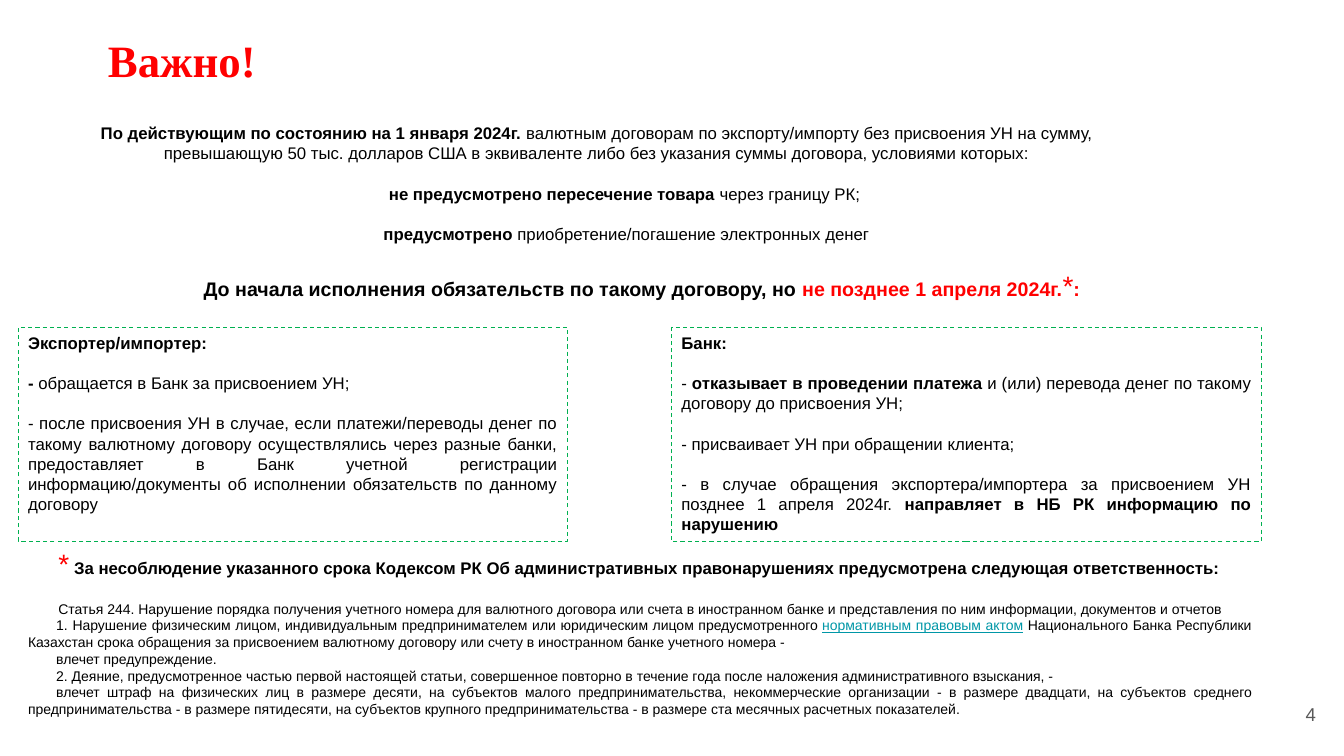
import pptx
import pptx.dml.color
import pptx.enum.dml
import pptx.enum.shapes
import pptx.enum.text
import pptx.util

Inches, Pt = pptx.util.Inches, pptx.util.Pt
ALIGN = pptx.enum.text.PP_ALIGN
ANCHOR = pptx.enum.text.MSO_ANCHOR

COLORS = {"black": "000000", "red": "FF0000", "green": "00B050",
          "link": "0097A7", "grey": "595959"}
LINE = 1.2  # line height relative to the font size
GAP = 14.4  # space of one 12 pt line between paragraphs

# Content: a paragraph is (runs, options), a run is (text, options)
BOLD = {"bold": True}
RED = {"bold": True, "color": "red"}
STAR = {"size": 20, "color": "red"}
CENTER = {"align": ALIGN.CENTER}
SPACED = {"before": GAP}
NOTE = {"size": 10, "first_line": 0.28}

TITLE = [([("Важно!", RED)], {"align": ALIGN.CENTER, "size": 32,
                              "font": "Times New Roman"})]
CONDITIONS = [
    ([("По действующим по состоянию на 1 января 2024г. ", BOLD),
      ("валютным договорам по экспорту/импорту без присвоения УН на сумму, "
       "превышающую 50 тыс. долларов США в эквиваленте либо без указания "
       "суммы договора, условиями которых:", {})], CENTER),
    ([("не предусмотрено пересечение товара", BOLD),
      (" через границу РК;", {})], {**CENTER, **SPACED, "left": 0.55}),
    ([("предусмотрено", BOLD),
      (" приобретение/погашение электронных денег", {})],
     {**CENTER, **SPACED, "left": 0.59}),
]
DEADLINE = [
    ([("До начала исполнения обязательств по такому договору, но ", BOLD),
      ("не позднее 1 апреля 2024г.", RED), ("*", STAR), (":", RED)],
     {**CENTER, "size": 14}),
]
TRADER = [
    ([("Экспортер/импортер:", BOLD)], {}),
    ([("- ", BOLD), ("обращается в Банк за присвоением УН;", {})], SPACED),
    ([("- после присвоения УН в случае, если платежи/переводы денег по такому "
       "валютному договору осуществлялись через разные банки, предоставляет в "
       "Банк учетной регистрации информацию/документы об исполнении "
       "обязательств по данному договору", {})], SPACED),
]
BANK = [
    ([("Банк:", BOLD)], {}),
    ([("- ", {}), ("отказывает в проведении платежа", BOLD),
      (" и (или) перевода денег по такому договору до присвоения УН;", {})],
     SPACED),
    ([("- присваивает УН при обращении клиента;", {})], SPACED),
    ([("- в случае обращения экспортера/импортера за присвоением УН позднее "
       "1 апреля 2024г. ", {}),
      ("направляет в НБ РК информацию по нарушению", BOLD)], SPACED),
]
LIABILITY = [
    ([("*", STAR),
      (" За несоблюдение указанного срока Кодексом РК Об административных "
       "правонарушениях предусмотрена следующая ответственность:", BOLD)],
     CENTER),
    ([("Статья 244. Нарушение порядка получения учетного номера для валютного "
       "договора или счета в иностранном банке и представления по ним "
       "информации, документов и отчетов", {})],
     {**CENTER, **SPACED, "size": 10}),
    ([("1. Нарушение физическим лицом, индивидуальным предпринимателем или "
       "юридическим лицом предусмотренного ", {}),
      ("нормативным правовым актом", {"color": "link", "underline": True}),
      (" Национального Банка Республики Казахстан срока обращения за "
       "присвоением валютному договору или счету в иностранном банке учетного "
       "номера -", {})], NOTE),
    ([("влечет предупреждение.", {})], NOTE),
    ([("2. Деяние, предусмотренное частью первой настоящей статьи, совершенное "
       "повторно в течение года после наложения административного взыскания, "
       "-", {})], NOTE),
    ([("влечет штраф на физических лиц в размере десяти, на субъектов малого "
       "предпринимательства, некоммерческие организации - в размере двадцати, "
       "на субъектов среднего предпринимательства - в размере пятидесяти, на "
       "субъектов крупного предпринимательства - в размере ста месячных "
       "расчетных показателей.", {})], NOTE),
]
PAGE_NUMBER = [([("4", {"color": "grey"})], {"align": ALIGN.RIGHT, "size": 13.3})]

# Positions: left, top, width, height
TITLE_AT = (0.96, 0.27, 1.69, 0.64)
TEXT_BOXES = [
    (CONDITIONS, (0.41, 1.17, 11.02, 1.31), ANCHOR.TOP),
    (DEADLINE, (1.91, 2.61, 8.91, 0.44), ANCHOR.TOP),
    (LIABILITY, (0.18, 5.37, 12.33, 2.05), ANCHOR.TOP),
    (PAGE_NUMBER, (12.35, 6.8, 0.8, 0.57), ANCHOR.MIDDLE),
]
FRAME_TOP, FRAME_HEIGHT = 3.25, 2.12
FRAMES = [(TRADER, 0.18, 5.45), (BANK, 6.66, 5.85)]


def color(name):
    return pptx.dml.color.RGBColor.from_string(COLORS[name])


def write(shape, content, anchor=ANCHOR.TOP, wrap=True):
    frame = shape.text_frame
    frame.word_wrap = wrap
    frame.auto_size = pptx.enum.text.MSO_AUTO_SIZE.NONE
    frame.vertical_anchor = anchor
    frame.margin_left = frame.margin_right = Inches(0.1)
    frame.margin_top = frame.margin_bottom = Inches(0.05)
    for index, (runs, options) in enumerate(content):
        paragraph = frame.add_paragraph() if index else frame.paragraphs[0]
        size = options.get("size", 12)
        largest = max(style.get("size", size) for text, style in runs)
        paragraph.alignment = options.get("align", ALIGN.JUSTIFY)
        paragraph.line_spacing = Pt(largest * LINE)
        paragraph.space_before = Pt(options.get("before", 0))
        paragraph.space_after = Pt(0)
        properties = paragraph._p.get_or_add_pPr()
        properties.set("marL", str(Inches(options.get("left", 0))))
        properties.set("indent", str(Inches(options.get("first_line", 0))))
        for text, style in runs:
            run = paragraph.add_run()
            run.text = text
            run.font.name = options.get("font", "Arial")
            run.font.size = Pt(style.get("size", size))
            run.font.bold = style.get("bold", False)
            run.font.underline = style.get("underline", False)
            run.font.color.rgb = color(style.get("color", "black"))


presentation = pptx.Presentation()
presentation.slide_width = Inches(13.33)
presentation.slide_height = Inches(7.5)
slide = presentation.slides.add_slide(presentation.slide_layouts[5])

# Title
title = slide.shapes.title
title.left, title.top, title.width, title.height = map(Inches, TITLE_AT)
write(title, TITLE, wrap=False)

# Dashed frames for the two parties
for content, left, width in FRAMES:
    frame_shape = slide.shapes.add_shape(
        pptx.enum.shapes.MSO_SHAPE.RECTANGLE, Inches(left), Inches(FRAME_TOP),
        Inches(width), Inches(FRAME_HEIGHT))
    frame_shape.shadow.inherit = False
    frame_shape.fill.background()
    frame_shape.line.color.rgb = color("green")
    frame_shape.line.width = Pt(0.75)
    frame_shape.line.dash_style = pptx.enum.dml.MSO_LINE.DASH
    write(frame_shape, content)

# Free text and page number
for content, position, anchor in TEXT_BOXES:
    write(slide.shapes.add_textbox(*map(Inches, position)), content, anchor)

presentation.save("out.pptx")
